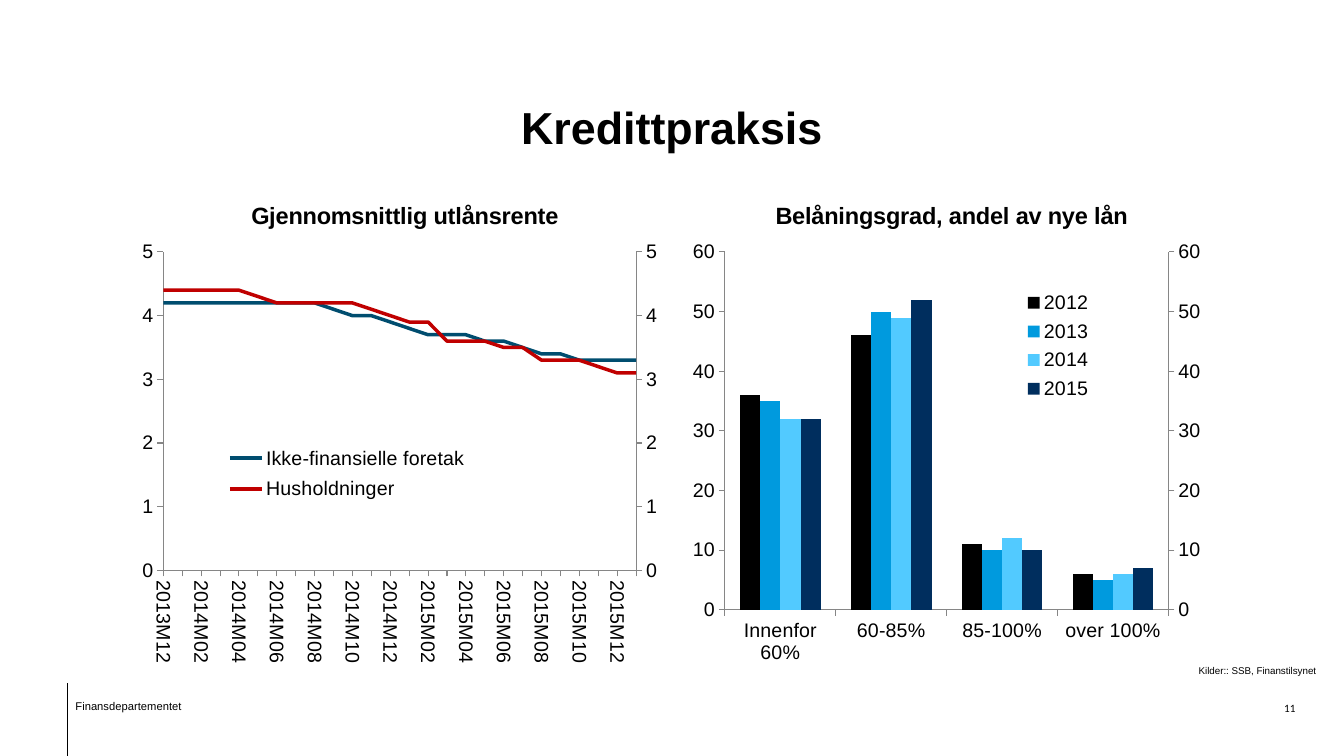
from copy import deepcopy
from dataclasses import dataclass

from pptx import Presentation
from pptx.chart.chart import Chart
from pptx.chart.data import CategoryChartData
from pptx.dml.color import RGBColor
from pptx.enum.chart import XL_CHART_TYPE as ChartType
from pptx.enum.chart import XL_LEGEND_POSITION as LegendSide
from pptx.enum.chart import XL_MARKER_STYLE as MarkerStyle
from pptx.enum.chart import XL_TICK_MARK as TickMark
from pptx.enum.shapes import MSO_CONNECTOR as Connector
from pptx.enum.text import MSO_ANCHOR as Anchor
from pptx.enum.text import PP_ALIGN as Align
from pptx.oxml import parse_xml
from pptx.oxml.ns import nsdecls, qn
from pptx.slide import Slide
from pptx.util import Inches, Pt

BLACK = RGBColor(0x00, 0x00, 0x00)
AXIS_GREY = RGBColor(0x86, 0x86, 0x86)
TEAL = RGBColor(0x00, 0x4D, 0x6F)
RED = RGBColor(0xC0, 0x00, 0x00)
BLUE = RGBColor(0x00, 0x9A, 0xDE)
LIGHT_BLUE = RGBColor(0x52, 0xCA, 0xFF)
NAVY = RGBColor(0x00, 0x2E, 0x5E)


@dataclass(frozen=True)
class Box:
    """Slide position in inches."""
    left: float
    top: float
    width: float
    height: float


@dataclass(frozen=True)
class Series:
    name: str
    values: list[float]
    color: RGBColor | None


@dataclass(frozen=True)
class Panel:
    """A chart whose last series is a line on the right axis."""
    title: str
    kind: ChartType
    box: Box
    plot: Box
    legend: Box
    heading: Box
    legend_side: LegendSide
    categories: list[str]
    series: list[Series]
    maximum: float
    step: float
    crossing: str


MONTHS = (["2013M12"] + [f"{year}M{month:02}" for year in (2014, 2015)
                         for month in range(1, 13)] + ["2016M01"])

LENDING_RATE = Panel(
    "Gjennomsnittlig utlånsrente", ChartType.LINE,
    Box(1.31, 1.74, 5.32, 4.95), Box(1.62, 2.5, 4.69, 3.16),
    Box(2.22, 4.35, 2.45, 0.7), Box(2.45, 1.95, 3.04, 0.27),
    LegendSide.LEFT, MONTHS,
    [Series("Ikke-finansielle foretak",
            [4.2, 4.2, 4.2, 4.2, 4.2, 4.2, 4.2, 4.2, 4.2, 4.1, 4, 4, 3.9,
             3.8, 3.7, 3.7, 3.7, 3.6, 3.6, 3.5, 3.4, 3.4, 3.3, 3.3, 3.3, 3.3], TEAL),
     Series("Husholdninger",
            [4.4, 4.4, 4.4, 4.4, 4.4, 4.3, 4.2, 4.2, 4.2, 4.2, 4.2, 4.1, 4,
             3.9, 3.9, 3.6, 3.6, 3.6, 3.5, 3.5, 3.3, 3.3, 3.3, 3.2, 3.1, 3.1], RED)],
    5, 1, "midCat")

LOAN_TO_VALUE = Panel(
    "Belåningsgrad, andel av nye lån", ChartType.COLUMN_CLUSTERED,
    Box(6.78, 1.74, 5.24, 4.95), Box(7.19, 2.5, 4.4, 3.55),
    Box(10.12, 2.83, 0.75, 1.2), Box(7.65, 1.95, 3.49, 0.27),
    LegendSide.TOP, ["Innenfor 60%", "60-85%", "85-100%", "over 100%"],
    [Series("2012", [36, 46, 11, 6], BLACK),
     Series("2013", [35, 50, 10, 5], BLUE),
     Series("2014", [32, 49, 12, 6], LIGHT_BLUE),
     Series("2015", [32, 52, 10, 7], NAVY),
     Series("Series 5", [10, 10, 10, 10], None)],  # carries the right axis
    60, 10, "between")


def inches(box: Box) -> tuple[Inches, Inches, Inches, Inches]:
    return Inches(box.left), Inches(box.top), Inches(box.width), Inches(box.height)


def add_text(slide: Slide, text: str, box: Box, *, size: float, font: str = "Arial",
             bold: bool = False, align: Align = Align.LEFT,
             anchor: Anchor = Anchor.TOP, right_inset: float = 0.1) -> None:
    frame = slide.shapes.add_textbox(*inches(box)).text_frame
    frame.word_wrap = True
    frame.vertical_anchor = anchor
    frame.margin_right = Inches(right_inset)
    paragraph = frame.paragraphs[0]
    paragraph.text = text
    paragraph.alignment = align
    style = paragraph.font
    style.size, style.name, style.bold = Pt(size), font, bold
    style.color.rgb = BLACK


def element(tag: str, value: object):
    return parse_xml(f'<c:{tag} {nsdecls("c")} val="{value}"/>')


def set_layout(part, box: Box, frame: Box, inner: bool = False) -> None:
    """Place a chart part at a slide position."""
    for old in part.findall(qn("c:layout")):
        part.remove(old)
    fractions = {"x": (box.left - frame.left) / frame.width,
                 "y": (box.top - frame.top) / frame.height,
                 "w": box.width / frame.width, "h": box.height / frame.height}
    target = '<c:layoutTarget val="inner"/>' if inner else ""
    sizes = "".join(f'<c:{key} val="{value:.4f}"/>' for key, value in fractions.items())
    layout = parse_xml(
        f'<c:layout {nsdecls("c")}><c:manualLayout>{target}<c:xMode val="edge"/>'
        f'<c:yMode val="edge"/>{sizes}</c:manualLayout></c:layout>')
    leading = {qn("c:tx"), qn("c:legendPos"), qn("c:legendEntry")}
    part.insert(sum(child.tag in leading for child in part), layout)


def format_axes(chart: Chart, panel: Panel) -> None:
    values, categories = chart.value_axis, chart.category_axis
    values.has_major_gridlines = False
    values.minimum_scale, values.maximum_scale = 0, panel.maximum
    values.major_unit = panel.step
    values.tick_labels.number_format = "0"
    values.tick_labels.number_format_is_linked = False
    for axis in (values, categories):
        axis.major_tick_mark = TickMark.OUTSIDE
        axis.minor_tick_mark = TickMark.NONE
        axis.format.line.color.rgb = AXIS_GREY
        axis.format.line.width = Pt(0.75)
    value_xml = values._element
    for old in value_xml.findall(qn("c:crossBetween")):
        value_xml.remove(old)
    value_xml.find(qn("c:crosses")).addnext(element("crossBetween", panel.crossing))
    if panel.kind == ChartType.LINE:
        categories.tick_labels.font.size = Pt(14)
        body = categories._element.find(qn("c:txPr")).find(qn("a:bodyPr"))
        body.set("rot", "5400000")
        body.set("vert", "horz")
        categories._element.find(qn("c:noMultiLvlLbl")).addprevious(
            element("tickLblSkip", 2))


def add_right_axis(chart: Chart) -> None:
    """Move the last series to a line plot with its own axes."""
    first_plot = chart.plots[0]._element
    last = first_plot.findall(qn("c:ser"))[-1]
    for flag in last.findall(qn("c:invertIfNegative")):
        last.remove(flag)
    line_plot = parse_xml(
        f'<c:lineChart {nsdecls("c")}><c:grouping val="standard"/>'
        '<c:varyColors val="0"/><c:marker val="1"/>'
        '<c:axId val="5001"/><c:axId val="5002"/></c:lineChart>')
    line_plot.insert(2, last)
    first_plot.addnext(line_plot)

    left, bottom = chart.value_axis._element, chart.category_axis._element
    right, hidden = deepcopy(left), deepcopy(bottom)
    for axis, own, other in ((right, 5002, 5001), (hidden, 5001, 5002)):
        axis.find(qn("c:axId")).set("val", str(own))
        axis.find(qn("c:crossAx")).set("val", str(other))
    right.find(qn("c:axPos")).set("val", "r")
    right.find(qn("c:crosses")).set("val", "max")
    hidden.find(qn("c:delete")).set("val", "1")
    max((left, bottom), key=left.getparent().index).addnext(right)
    right.addnext(hidden)


def add_panel(slide: Slide, panel: Panel) -> None:
    data = CategoryChartData()
    data.categories = panel.categories
    for entry in panel.series:
        data.add_series(entry.name, entry.values)
    chart = slide.shapes.add_chart(panel.kind, *inches(panel.box), data).chart
    chart.font.size, chart.font.name = Pt(14), "Arial"
    chart.font.color.rgb = BLACK
    chart.plots[0].vary_by_categories = False
    if panel.kind == ChartType.COLUMN_CLUSTERED:
        chart.plots[0].gap_width, chart.plots[0].overlap = 150, 0
    format_axes(chart, panel)
    add_right_axis(chart)

    # Series colours
    drawn = [(plot, series) for plot in chart.plots for series in plot.series]
    for (plot, series), entry in zip(drawn, panel.series):
        if plot._element.tag == qn("c:barChart"):
            series.format.fill.solid()
            series.format.fill.fore_color.rgb = entry.color
            continue
        series.smooth = False
        series.marker.style = MarkerStyle.NONE
        if entry.color is None:
            series.format.line.fill.background()
        else:
            series.format.line.color.rgb = entry.color
            series.format.line.width = Pt(2.5)

    # Heading and legend
    chart.has_title = True
    heading = chart.chart_title.text_frame
    heading.text = panel.title
    style = heading.paragraphs[0].runs[0].font
    style.size, style.bold, style.name = Pt(16.8), True, "Arial"
    style.color.rgb = BLACK
    chart.has_legend = True
    chart.legend.position = panel.legend_side
    chart.legend.include_in_layout = True
    legend = chart.legend._element
    for index, entry in enumerate(panel.series):
        if entry.color is None:
            legend.find(qn("c:legendPos")).addnext(parse_xml(
                f'<c:legendEntry {nsdecls("c")}><c:idx val="{index}"/>'
                '<c:delete val="1"/></c:legendEntry>'))
    set_layout(legend, panel.legend, panel.box)
    set_layout(chart.chart_title._element, panel.heading, panel.box)
    set_layout(chart.plots[0]._element.getparent(), panel.plot, panel.box, inner=True)


def main() -> None:
    deck = Presentation()
    deck.slide_width, deck.slide_height = Inches(13.33), Inches(7.5)
    slide = deck.slides.add_slide(deck.slide_layouts[6])

    # Footer
    add_text(slide, "Finansdepartementet", Box(0.65, 6.89, 2.83, 0.24), size=8)
    rule = slide.shapes.add_connector(Connector.STRAIGHT, Inches(0.67), Inches(6.78),
                                      Inches(0.67), Inches(7.5))
    rule.line.color.rgb = BLACK
    rule.line.width = Pt(0.75)
    rule._element.spPr.append(parse_xml(f'<a:effectLst {nsdecls("a")}/>'))
    add_text(slide, "11", Box(12.3, 6.91, 0.55, 0.24), size=8, font="Calibri",
             align=Align.RIGHT, right_inset=0)

    # Title, charts and sources
    add_text(slide, "Kredittpraksis", Box(1.31, 0.32, 10.71, 1.25), size=32, bold=True,
             align=Align.CENTER, anchor=Anchor.BOTTOM)
    for panel in (LOAN_TO_VALUE, LENDING_RATE):
        add_panel(slide, panel)
    add_text(slide, "Kilder:: SSB, Finanstilsynet", Box(11.79, 6.54, 1.5, 0.22), size=7)

    deck.save("out.pptx")


if __name__ == "__main__":
    main()
